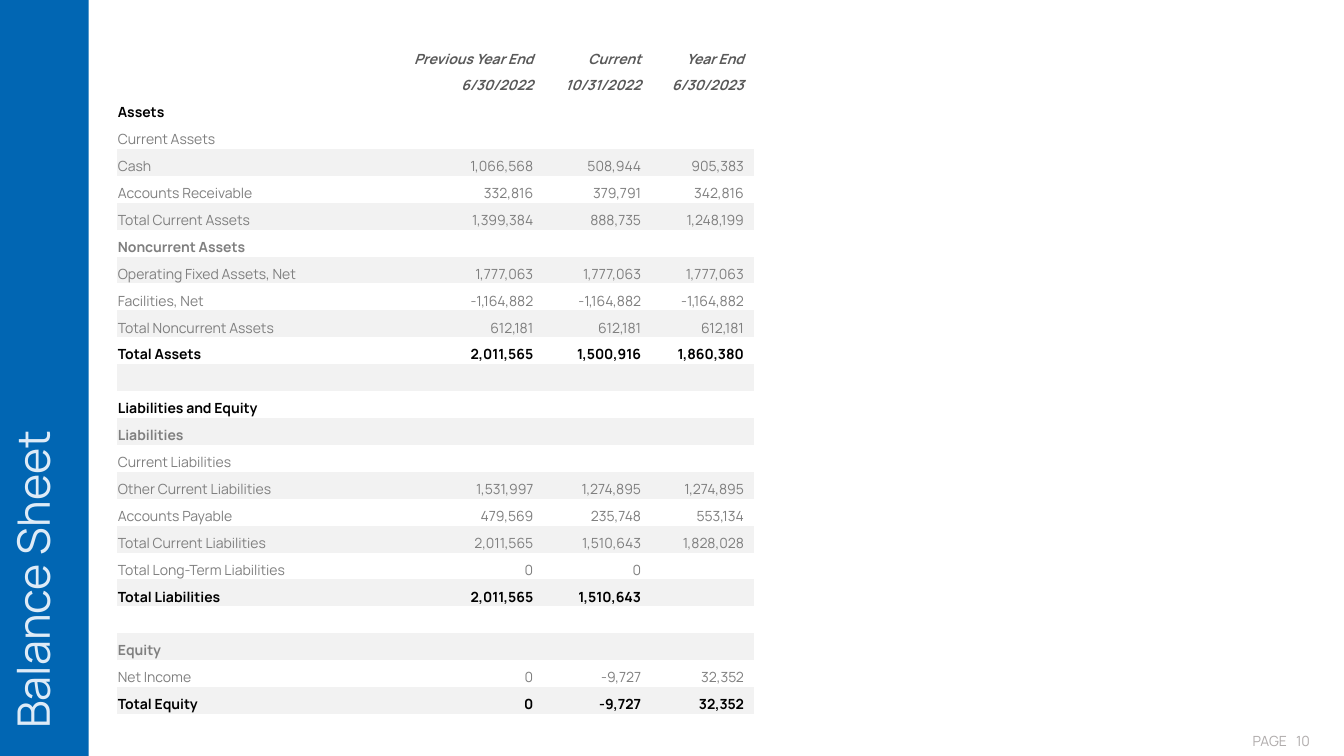
"""Build the balance sheet slide with a vertical title bar and a banded table."""
from pptx import Presentation
from pptx.dml.color import RGBColor
from pptx.enum.shapes import MSO_SHAPE
from pptx.enum.text import MSO_ANCHOR, PP_ALIGN
from pptx.util import Pt

FONT = "Manrope"
BLUE = RGBColor(0x01, 0x66, 0xB3)
PALE_BLUE = RGBColor(0xDE, 0xEB, 0xF7)
BLACK = RGBColor(0x00, 0x00, 0x00)
DARK = RGBColor(0x59, 0x59, 0x59)
GREY = RGBColor(0x7F, 0x7F, 0x7F)
LIGHT = RGBColor(0xAF, 0xAB, 0xAB)
BAND = RGBColor(0xF2, 0xF2, 0xF2)
NO_STYLE = "{2D5ABB26-0587-4C30-8999-92F81FD0307C}"

TITLE = "Balance Sheet"
FOOTER = [("PAGE", 887.76, 41.04), ("10", 918.72, 30.96)]
STYLES = {
    "header": (DARK, True, True),
    "total": (BLACK, True, False),
    "group": (GREY, True, False),
    "item": (GREY, False, False),
}
ROWS = [
    ("header", "", "Previous Year End", "Current", "Year End"),
    ("header", "", "6/30/2022", "10/31/2022", "6/30/2023"),
    ("total", "Assets"),
    ("item", "Current Assets"),
    ("item", "Cash", "1,066,568", "508,944", "905,383"),
    ("item", "Accounts Receivable", "332,816", "379,791", "342,816"),
    ("item", "Total Current Assets", "1,399,384", "888,735", "1,248,199"),
    ("group", "Noncurrent Assets"),
    ("item", "Operating Fixed Assets, Net", "1,777,063", "1,777,063", "1,777,063"),
    ("item", "Facilities, Net", "-1,164,882", "-1,164,882", "-1,164,882"),
    ("item", "Total Noncurrent Assets", "612,181", "612,181", "612,181"),
    ("total", "Total Assets", "2,011,565", "1,500,916", "1,860,380"),
    ("item",),
    ("total", "Liabilities and Equity"),
    ("group", "Liabilities"),
    ("item", "Current Liabilities"),
    ("item", "Other Current Liabilities", "1,531,997", "1,274,895", "1,274,895"),
    ("item", "Accounts Payable", "479,569", "235,748", "553,134"),
    ("item", "Total Current Liabilities", "2,011,565", "1,510,643", "1,828,028"),
    ("item", "Total Long-Term Liabilities", "0", "0"),
    ("total", "Total Liabilities", "2,011,565", "1,510,643"),
    ("item",),
    ("group", "Equity"),
    ("item", "Net Income", "0", "-9,727", "32,352"),
    ("total", "Total Equity", "0", "-9,727", "32,352"),
]
COL_WIDTHS = [180, 124.56, 77.04, 73.44]
ROW_HEIGHT = 19.24
FIRST_BAND = 4


def add_run(p, text, size, color, bold=False, italic=False):
    r = p.add_run()
    r.text = text
    r.font.name, r.font.size = FONT, Pt(size)
    r.font.bold, r.font.italic = bold, italic
    r.font.color.rgb = color


def add_title_bar(s):
    bar = s.shapes.add_shape(MSO_SHAPE.RECTANGLE, 0, 0, Pt(63.36), Pt(540))
    bar.shadow.inherit = False
    bar.fill.solid()
    bar.fill.fore_color.rgb = BLUE
    bar.line.fill.background()
    tf = bar.text_frame
    tf.vertical_anchor = MSO_ANCHOR.TOP
    tf.margin_left = tf.margin_right = Pt(3.6)
    tf.margin_bottom = Pt(19.5)
    tf._txBody.bodyPr.set("vert", "vert270")
    p = tf.paragraphs[0]
    p.alignment = PP_ALIGN.LEFT
    add_run(p, TITLE, 32, PALE_BLUE)


def fill_cell(cell, text, style, is_label, banded):
    if banded:
        cell.fill.solid()
        cell.fill.fore_color.rgb = BAND
    else:
        cell.fill.background()
    cell.vertical_anchor = MSO_ANCHOR.BOTTOM
    cell.margin_left = cell.margin_top = Pt(0.72)
    cell.margin_right = Pt(0.72 if is_label else 7.2)
    cell.margin_bottom = 0
    p = cell.text_frame.paragraphs[0]
    p.alignment = PP_ALIGN.LEFT if is_label else PP_ALIGN.RIGHT
    if text:
        add_run(p, text, 10, *STYLES[style])
    else:
        p._p.get_or_add_endParaRPr().set("sz", "1000")


def add_balance_table(s):
    frame = s.shapes.add_table(len(ROWS), len(COL_WIDTHS), Pt(83.52), Pt(29.52),
                               Pt(sum(COL_WIDTHS)), Pt(ROW_HEIGHT * len(ROWS)))
    table = frame.table
    table.first_row = table.horz_banding = False
    table._tbl.tblPr[0].text = NO_STYLE
    for column, width in zip(table.columns, COL_WIDTHS):
        column.width = Pt(width)
    for i, (style, *texts) in enumerate(ROWS):
        table.rows[i].height = Pt(ROW_HEIGHT)
        banded = i >= FIRST_BAND and i % 2 == 0
        for j in range(len(COL_WIDTHS)):
            text = texts[j] if j < len(texts) else ""
            fill_cell(table.cell(i, j), text, style, j == 0, banded)


def add_footer(s):
    for text, left, width in FOOTER:
        box = s.shapes.add_textbox(Pt(left), Pt(519.84), Pt(width), Pt(19.44))
        tf = box.text_frame
        tf.word_wrap = text != "PAGE"
        add_run(tf.paragraphs[0], text, 10, LIGHT)


def main():
    prs = Presentation()
    prs.slide_width, prs.slide_height = Pt(960), Pt(540)
    s = prs.slides.add_slide(prs.slide_layouts[6])
    add_footer(s)
    add_title_bar(s)
    add_balance_table(s)
    prs.save("out.pptx")


if __name__ == "__main__":
    main()
